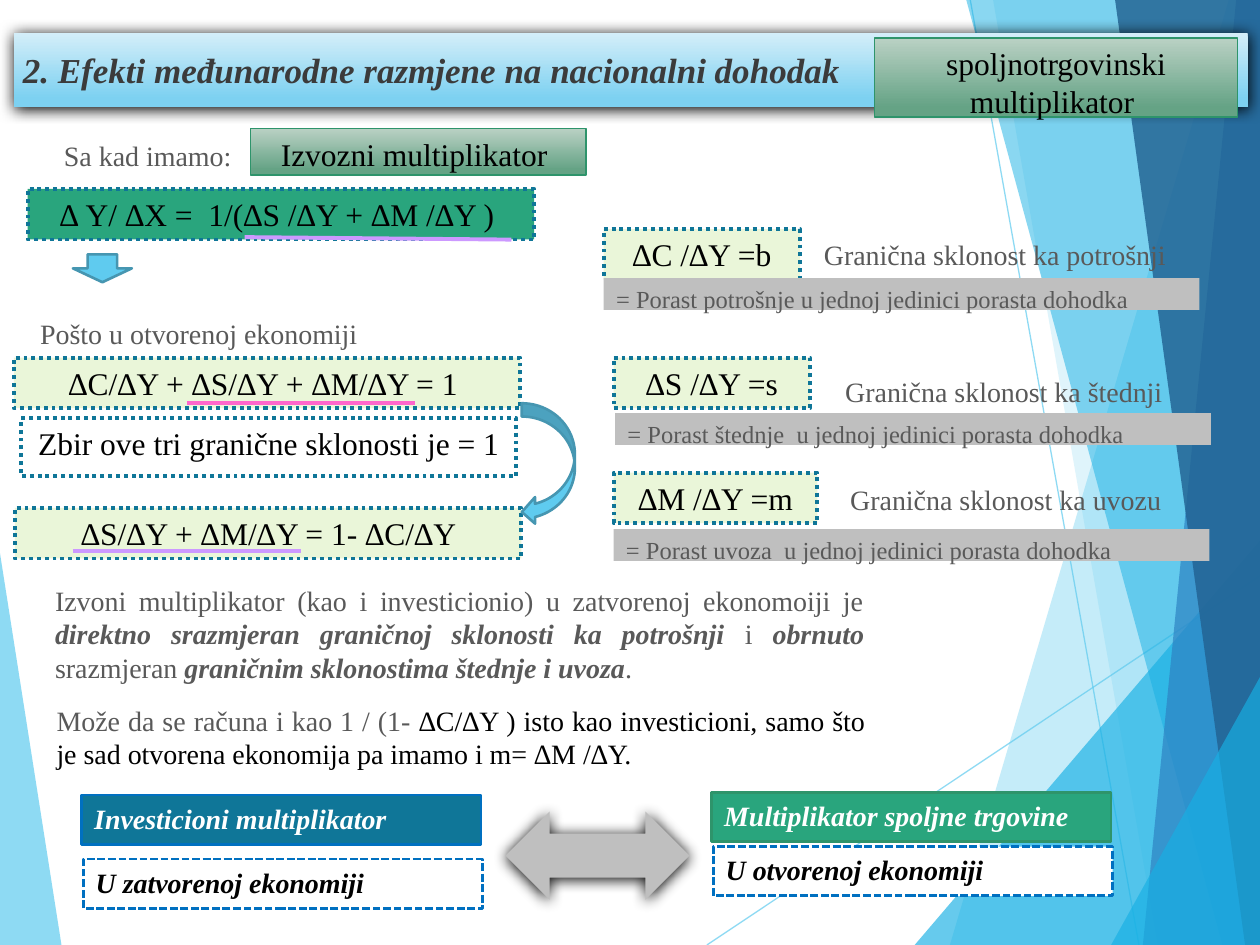
from dataclasses import dataclass

from lxml import etree
from pptx import Presentation
from pptx.dml.color import RGBColor
from pptx.enum import dml, shapes, text
from pptx.oxml import ns
from pptx.util import Cm, Pt


@dataclass(frozen=True)
class Theme:
    font: str = "Times New Roman"
    title_size: int = 20
    formula_size: int = 18
    body_size: int = 16
    note_size: int = 14
    black: str = "000000"
    white: str = "FFFFFF"
    gray: str = "595959"
    title_ink: str = "3B3B3B"
    silver: str = "BFBFBF"
    sky: str = "5FCBEF"
    sky_edge: str = "4696B1"
    azure: str = "17B0E4"
    blue: str = "2E83C3"
    navy: str = "226292"
    teal: str = "0F7698"
    border: str = "0070C0"
    mint: str = "EAF6D9"
    green: str = "29A57D"
    green_edge: str = "2E946B"
    pink: str = "FF66CC"
    violet: str = "CC99FF"
    title_grad: tuple = ("D4EEF9", "7DD1F1")
    badge_grad: tuple = ("BAD1C4", "65A385")


T = Theme()
W, H = 25.4, 19.05
DOT = dml.MSO_LINE.ROUND_DOT
DASH = dml.MSO_LINE.SQUARE_DOT
LEFT, CENTER, JUSTIFY = text.PP_ALIGN.LEFT, text.PP_ALIGN.CENTER, text.PP_ALIGN.JUSTIFY
SHAPE = shapes.MSO_SHAPE


def rgb(code):
    return RGBColor.from_string(code)


def add_xml(parent, tag, **attrs):
    return etree.SubElement(parent, ns.qn(tag), attrs)


def set_alpha(element, percent):
    for color in element.iter(ns.qn("a:srgbClr")):
        add_xml(color, "a:alpha", val=str(percent * 1000))


def paint(sp, fill, line=None, width=1.5, dash=None):
    """Fill with one colour or a pair (vertical gradient) and set the outline."""
    if isinstance(fill, tuple):
        sp.fill.gradient()
        sp.fill.gradient_angle = 270
        for stop, color, position in zip(sp.fill.gradient_stops, fill, (0, 0.88)):
            stop.color.rgb = rgb(color)
            stop.position = position
    else:
        sp.fill.solid()
        sp.fill.fore_color.rgb = rgb(fill)
    if line:
        sp.line.color.rgb = rgb(line)
        sp.line.width = Pt(width)
        if dash:
            sp.line.dash_style = dash
    else:
        sp.line.fill.background()
    sp.shadow.inherit = False


def add_shadow(sp):
    effects = sp._element.spPr.find(ns.qn("a:effectLst"))
    shadow = add_xml(effects, "a:outerShdw", blurRad=str(Pt(8.5)), dist=str(Pt(1)),
                     dir="5400000", algn="ctr", rotWithShape="0")
    add_xml(shadow, "a:srgbClr", val=T.black)


def write(sp, runs, size, color, align, emphasis=False, anchor=text.MSO_ANCHOR.TOP):
    """Write one paragraph; runs is a string or (string, changes) pairs."""
    tf = sp.text_frame
    tf.word_wrap = True
    tf.auto_size = text.MSO_AUTO_SIZE.NONE
    tf.vertical_anchor = anchor
    p = tf.paragraphs[0]
    p.alignment = align
    for words, changes in [(runs, {})] if isinstance(runs, str) else runs:
        r = p.add_run()
        r.text = words
        r.font.name = T.font
        r.font.size = Pt(size)
        r.font.bold = r.font.italic = changes.get("emphasis", emphasis)
        r.font.color.rgb = rgb(changes.get("color", color))


def add_preset(s, kind, at, fill, line=None, width=1.5, dash=None):
    sp = s.shapes.add_shape(kind, *map(Cm, at))
    paint(sp, fill, line, width, dash)
    return sp


def add_formula(s, at, words, fill=T.mint):
    sp = add_preset(s, SHAPE.RECTANGLE, at, fill, T.teal, 2.25, DOT)
    write(sp, words, T.formula_size, T.black, CENTER)


def add_badge(s, at, words):
    sp = add_preset(s, SHAPE.RECTANGLE, at, T.badge_grad, T.green_edge, 1)
    write(sp, words, T.formula_size, T.black, CENTER)


def add_label(s, at, words, color, fill, line, dash=None):
    sp = add_preset(s, SHAPE.RECTANGLE, at, fill, line, 1.5, dash)
    write(sp, words, T.body_size, color, JUSTIFY, emphasis=True)


def add_note(s, x, y, words):
    sp = add_preset(s, SHAPE.RECTANGLE, (x, y, 12.01, 0.64), T.silver)
    write(sp, words, T.note_size, T.gray, JUSTIFY)


def add_text(s, at, runs):
    write(s.shapes.add_textbox(*map(Cm, at)), runs, T.body_size, T.gray, JUSTIFY)


def add_line(s, x1, y1, x2, y2, color, width=2.25, alpha=None):
    c = s.shapes.add_connector(shapes.MSO_CONNECTOR.STRAIGHT, *map(Cm, (x1, y1, x2, y2)))
    c.line.color.rgb = rgb(color)
    c.line.width = Pt(width)
    add_xml(c._element.spPr, "a:effectLst")
    if alpha:
        set_alpha(c._element.spPr, alpha)


def add_facet(s, points, color, alpha):
    start, *rest = [(Cm(x), Cm(y)) for x, y in points]
    builder = s.shapes.build_freeform(*start)
    builder.add_line_segments(rest, close=True)
    sp = builder.convert_to_shape()
    paint(sp, color)
    set_alpha(sp._element.spPr, alpha)


def add_backdrop(s):
    add_facet(s, [(0, 11.15), (1.24, H), (0, H)], T.sky, 70)
    add_line(s, 14.25, H, W, 11.61, T.sky, 0.75, 70)
    add_line(s, 19.56, 0, 22.96, H, T.sky, 0.75, 70)
    # Each facet runs from a top point to a bottom point and on to the right edge.
    for top_x, top_y, bottom_x, color, alpha in (
        (24.77, 0, 19.15, T.sky, 36),
        (20.02, 0, 23.34, T.sky, 20),
        (W, 10.9, 18.44, T.azure, 66),
        (19.48, 0, 24.64, T.azure, 50),
        (24.92, 0, 23.04, T.blue, 70),
        (22.48, 0, 25.1, T.navy, 82),
        (W, 13.65, 22.4, T.azure, 66),
    ):
        points = [(top_x, top_y), (bottom_x, H), (W, H)]
        if top_x < W:
            points.append((W, top_y))
        add_facet(s, points, color, alpha)


def add_title(s):
    title = s.shapes.title
    s.shapes._spTree.append(title._element)  # in front of the backdrop
    title.left, title.top, title.width, title.height = map(Cm, (0.28, 0.66, 24.87, 1.5))
    geometry = etree.Element(ns.qn("a:prstGeom"), prst="roundRect")
    add_xml(geometry, "a:avLst")
    title._element.spPr.insert(1, geometry)
    paint(title, T.title_grad)
    add_shadow(title)
    write(title, "2. Efekti međunarodne razmjene na nacionalni dohodak", T.title_size,
          T.title_ink, LEFT, emphasis=True, anchor=text.MSO_ANCHOR.MIDDLE)
    tf = title.text_frame
    tf.margin_left = tf.margin_right = Cm(0.18)
    tf.margin_top = tf.margin_bottom = Cm(0.1)


def add_derivation(s):
    add_text(s, (1.04, 2.67, 9.27, 0.99), "Sa kad imamo:")
    add_badge(s, (5.05, 2.59, 6.76, 0.94), "Izvozni multiplikator ")
    add_formula(s, (0.56, 3.81, 10.21, 1.02), "∆ Y/ ∆X =  1/(∆S /∆Y + ∆M /∆Y ) ", T.green)
    add_preset(s, SHAPE.DOWN_ARROW, (1.47, 5.13, 1.19, 0.56), T.sky, T.sky_edge)
    add_text(s, (0.56, 6.25, 11.84, 0.91), "Pošto u otvorenoj ekonomiji")
    add_formula(s, (0.28, 7.21, 10.21, 1.02), "∆C/∆Y + ∆S/∆Y + ∆M/∆Y = 1 ")
    add_formula(s, (0.43, 8.43, 9.98, 1.17), "Zbir ove tri granične sklonosti je = 1", T.white)
    add_formula(s, (0.3, 10.24, 10.21, 1.02), " ∆S/∆Y + ∆M/∆Y = 1- ∆C/∆Y ")
    add_line(s, 4.93, 4.78, 10.31, 4.83, T.violet)
    add_line(s, 3.76, 8.13, 8.36, 8.13, T.pink)
    add_line(s, 1.47, 11.1, 6.07, 11.1, T.violet)
    add_preset(s, SHAPE.CURVED_LEFT_ARROW, (10.52, 8.13, 1.07, 2.46), T.sky, T.sky_edge)


def add_propensities(s):
    for box, formula, label, name, note, meaning in (
        ((12.17, 4.62, 3.96), "∆C /∆Y =b", (16.36, 4.67), "potrošnji",
         (12.17, 5.61), "potrošnje"),
        ((12.37, 7.21, 3.96), "∆S /∆Y =s", (16.79, 7.42), "štednji",
         (12.4, 8.33), "štednje "),
        ((12.37, 9.53, 4.11), "∆M /∆Y =m", (16.89, 9.6), "uvozu",
         (12.37, 10.67), "uvoza "),
    ):
        add_formula(s, (*box, 1.02), formula)
        add_text(s, (*label, 8.1, 1.02), f"Granična sklonost ka {name}")
        add_note(s, *note, f"= Porast {meaning} u jednoj jedinici porasta dohodka")


def add_conclusions(s):
    strong, dark = {"emphasis": True}, {"color": T.black}
    add_text(s, (0.86, 11.63, 16.81, 2.26), [
        ("Izvoni multiplikator (kao i investicionio) u zatvorenoj ekonomoiji je ", {}),
        ("direktno srazmjeran graničnoj sklonosti ka potrošnji ", strong),
        ("i ", {}), ("obrnuto", strong), (" srazmjeran ", {}),
        ("graničnim sklonostima štednje i uvoza", strong), (".", {})])
    add_text(s, (0.89, 14.05, 16.81, 2.26), [
        ("Može da se računa i kao 1 / (1-", {}),
        (" ∆C/∆Y ) isto kao investicioni, samo što je sad otvorena ekonomija "
         "pa imamo i m= ∆M /∆Y.", dark)])


def add_comparison(s):
    size = (8.05, 0.99)
    add_label(s, (1.65, 16.03, *size), "Investicioni multiplikator", T.white, T.teal, T.border)
    add_label(s, (14.35, 15.98, *size), "Multiplikator spoljne trgovine", T.white, T.green,
              T.green_edge)
    add_label(s, (1.68, 17.32, *size), "U zatvorenoj ekonomiji", T.black, T.white, T.border, DASH)
    add_label(s, (14.38, 17.07, *size), "U otvorenoj ekonomiji", T.black, T.white, T.border, DASH)
    add_shadow(add_preset(s, SHAPE.LEFT_RIGHT_ARROW, (10.19, 16.36, 3.71, 1.78), T.silver))


def main():
    prs = Presentation()
    prs.slide_width, prs.slide_height = Cm(W), Cm(H)
    s = prs.slides.add_slide(prs.slide_layouts[5])
    add_backdrop(s)
    add_title(s)
    add_derivation(s)
    add_propensities(s)
    add_conclusions(s)
    add_comparison(s)
    add_badge(s, (17.63, 0.76, 7.32, 1.6), "spoljnotrgovinski multiplikator ")
    prs.save("out.pptx")


if __name__ == "__main__":
    main()
